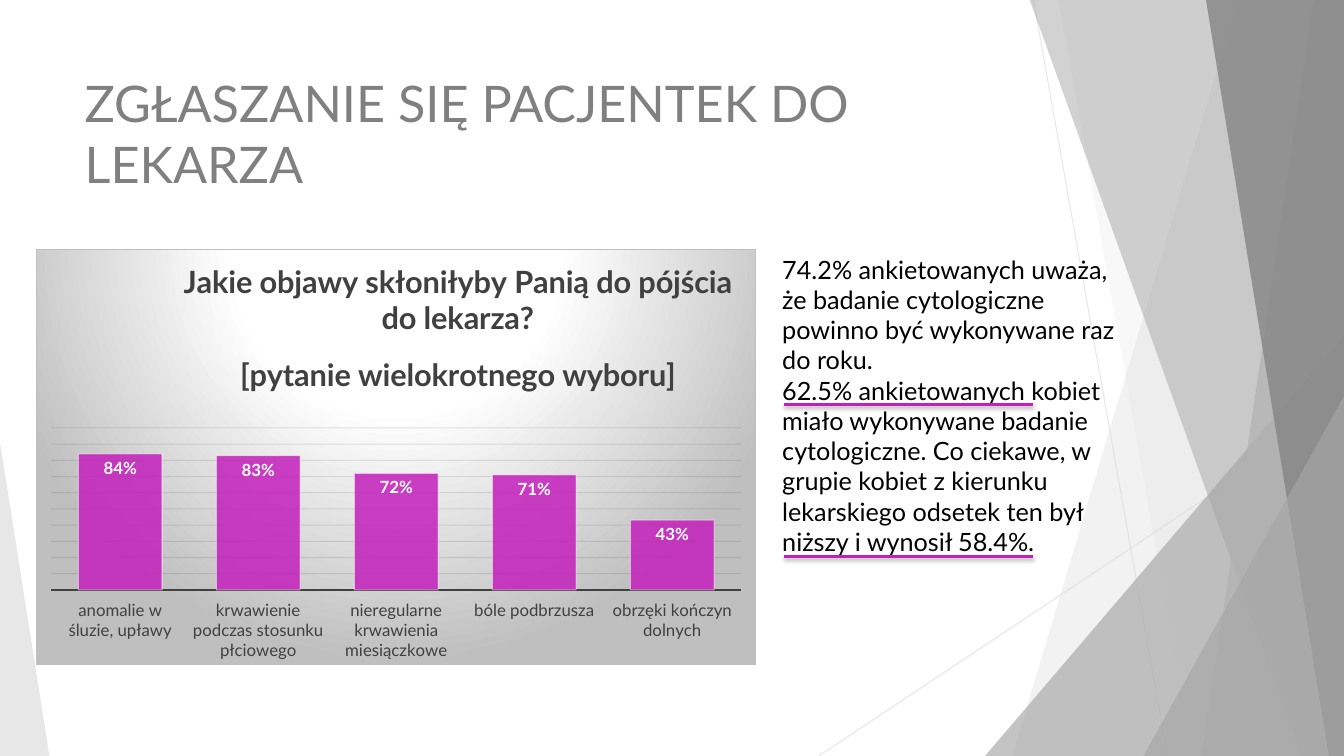
from lxml.etree import SubElement
from pptx import Presentation
from pptx.chart.data import CategoryChartData
from pptx.dml.color import RGBColor
from pptx.enum.chart import XL_CHART_TYPE, XL_LABEL_POSITION, XL_TICK_LABEL_POSITION, XL_TICK_MARK
from pptx.enum.shapes import MSO_CONNECTOR, MSO_SHAPE
from pptx.enum.text import MSO_ANCHOR, PP_ALIGN
from pptx.oxml import parse_xml
from pptx.oxml.ns import nsdecls, qn
from pptx.util import Inches, Pt

FONT = "Lato"
MAGENTA = "C31FBB"
BOTTOM = 7.5
RIGHT = 13.33

FACETS = [
    ([(12.28, -0.01), (RIGHT, -0.01), (RIGHT, BOTTOM), (10.04, BOTTOM)], "DDDDDD", 36),
    ([(10.5, -0.01), (RIGHT, -0.01), (RIGHT, BOTTOM), (11.83, BOTTOM)], "DDDDDD", 20),
    ([(9.77, 3.33, 3.56, 4.17), 1], "A6A6A6", 66),
    ([(10.21, -0.01), (RIGHT, -0.01), (RIGHT, BOTTOM), (12.91, BOTTOM)], "A6A6A6", 50),
    ([(13.03, -0.01), (RIGHT, -0.01), (RIGHT, BOTTOM), (11.92, BOTTOM)], "B2B2B2", 70),
    ([(11.96, -0.01), (RIGHT, -0.01), (RIGHT, BOTTOM), (13.18, BOTTOM)], "858585", 80),
    ([(11.34, 3.93, 1.99, 3.57), 1], "A6A6A6", 66),
    ([(0, 4.39, 0.49, 3.11), 0], "DDDDDD", 70),
]

SYMPTOMS = {
    "anomalie w śluzie, upławy": 0.84,
    "krwawienie podczas stosunku płciowego": 0.83,
    "nieregularne krwawienia miesiączkowe": 0.72,
    "bóle podbrzusza": 0.71,
    "obrzęki kończyn dolnych": 0.43,
}

FINDINGS = [
    "74.2% ankietowanych uważa, że badanie cytologiczne powinno być wykonywane raz do roku.",
    "62.5% ankietowanych kobiet miało wykonywane badanie cytologiczne. Co ciekawe, w grupie "
    "kobiet z kierunku lekarskiego odsetek ten był niższy i wynosił 58.4%.",
]


def color(value):
    return RGBColor.from_string(value)


def set_alpha(element, *percents):
    for clr, percent in zip(element.iter(qn("a:srgbClr")), percents):
        SubElement(clr, qn("a:alpha")).set("val", str(percent * 1000))


def set_font(font, size, value, bold=False):
    font.name = FONT
    font.size = Pt(size)
    font.bold = bold
    font.color.rgb = color(value)


def set_line(line, value, width):
    line.color.rgb = color(value)
    line.width = Pt(width)


def add_facet(s, geometry, value, alpha):
    if len(geometry) == 2:
        box, apex = geometry
        sp = s.shapes.add_shape(MSO_SHAPE.ISOSCELES_TRIANGLE, *map(Inches, box))
        sp.adjustments[0] = apex
    else:
        points = [(Inches(x), Inches(y)) for x, y in geometry]
        builder = s.shapes.build_freeform(*points[0], scale=1.0)
        builder.add_line_segments(points[1:], close=True)
        sp = builder.convert_to_shape()
    sp.shadow.inherit = False
    sp.fill.solid()
    sp.fill.fore_color.rgb = color(value)
    sp.line.fill.background()
    set_alpha(sp._element, alpha)


def add_line(s, start, end, value, width, alpha=100):
    line = s.shapes.add_connector(MSO_CONNECTOR.STRAIGHT, *map(Inches, start + end))
    set_line(line.line, value, width)
    if alpha < 100:
        set_alpha(line._element, alpha)
    return SubElement(line._element.spPr, qn("a:effectLst"))


def add_underline(s, y):
    effects = add_line(s, (7.78, y), (10.25, y), MAGENTA, 2)
    effects.append(parse_xml(
        f'<a:outerShdw {nsdecls("a")} blurRad="{Pt(3)}" dist="{Pt(2)}" dir="5400000" '
        'rotWithShape="0"><a:srgbClr val="000000"><a:alpha val="35000"/></a:srgbClr></a:outerShdw>'))


def set_title(s, text):
    title = s.shapes.title
    title.left, title.top, title.width, title.height = map(Inches, (0.74, 0.67, 9.4, 1.44))
    tf = title.text_frame
    tf.text = text
    tf.word_wrap = True
    tf.vertical_anchor = MSO_ANCHOR.TOP
    p = tf.paragraphs[0]
    p.alignment = PP_ALIGN.LEFT
    set_font(p.runs[0].font, 36, "808080")


def add_text(s, box, paragraphs):
    tf = s.shapes.add_textbox(*map(Inches, box)).text_frame
    tf.word_wrap = True
    tf.text = "\n".join(paragraphs)
    for p in tf.paragraphs:
        set_font(p.runs[0].font, 18, "000000")


def layout_xml(x, y, size="", target=""):
    return parse_xml(
        f'<c:layout {nsdecls("c")}><c:manualLayout>{target}<c:xMode val="edge"/>'
        f'<c:yMode val="edge"/><c:x val="{x}"/><c:y val="{y}"/>{size}</c:manualLayout></c:layout>')


def place_chart_parts(chart):
    title = chart.chart_title._element
    plot_area = chart._chartSpace.chart.plotArea
    for parent in (title, plot_area):
        for old in parent.findall(qn("c:layout")):
            parent.remove(old)
    title.find(qn("c:tx")).addnext(layout_xml(0.2, 0.02))
    plot_area.insert(0, layout_xml(0.02, 0.43, '<c:w val="0.96"/><c:h val="0.39"/>',
                                   '<c:layoutTarget val="inner"/>'))


def fill_chart_area(chart):
    stops = "".join(f'<a:gs pos="{pos * 1000}"><a:srgbClr val="{value}"/></a:gs>'
                    for pos, value in ((0, "FFFFFF"), (39, "FFFFFF"), (100, "BFBFBF")))
    chart._chartSpace.chart.addnext(parse_xml(
        f'<c:spPr {nsdecls("c", "a")}><a:gradFill><a:gsLst>{stops}</a:gsLst><a:path path="circle">'
        '<a:fillToRect l="50000" t="-80000" r="50000" b="180000"/></a:path></a:gradFill>'
        f'<a:ln w="{Pt(0.75)}"><a:solidFill><a:srgbClr val="BFBFBF"/></a:solidFill></a:ln></c:spPr>'))


def format_axes(chart):
    cat = chart.category_axis
    cat.major_tick_mark = XL_TICK_MARK.NONE
    cat.tick_label_position = XL_TICK_LABEL_POSITION.LOW
    set_font(cat.tick_labels.font, 12, "404040")
    set_line(cat.format.line, "404040", 1.5)
    val = chart.value_axis
    val.minimum_scale, val.maximum_scale, val.major_unit = 0, 1, 0.1
    val.visible = False
    set_line(val.major_gridlines.format.line, "0D0D0D", 0.75)
    set_alpha(val._element, 10)


def format_columns(plot):
    plot.gap_width = 65
    plot.vary_by_categories = False
    series = plot.series[0]
    series.format.fill.solid()
    series.format.fill.fore_color.rgb = color(MAGENTA)
    set_line(series.format.line, "FFFFFF", 0.75)
    set_alpha(series._element, 85, 50)
    labels = series.data_labels
    labels.show_value = True
    labels.position = XL_LABEL_POSITION.INSIDE_END
    labels.number_format = "0%"
    labels.number_format_is_linked = False
    set_font(labels.font, 12, "FFFFFF", True)


def add_symptom_chart(s, box):
    data = CategoryChartData(number_format="0%")
    data.categories = list(SYMPTOMS)
    data.add_series("Series 1", list(SYMPTOMS.values()))
    chart = s.shapes.add_chart(XL_CHART_TYPE.COLUMN_CLUSTERED, *map(Inches, box), data).chart
    set_font(chart.font, 10, "000000")
    chart.has_legend = False
    tf = chart.chart_title.text_frame
    tf.text = "Jakie objawy skłoniłyby Panią do pójścia do lekarza?\v\v[pytanie wielokrotnego wyboru]"
    for r in tf.paragraphs[0].runs:
        set_font(r.font, 22, "404040", True)
    chart.chart_title.include_in_layout = False
    format_axes(chart)
    format_columns(chart.plots[0])
    place_chart_parts(chart)
    fill_chart_area(chart)


def main():
    prs = Presentation()
    prs.slide_width, prs.slide_height = Inches(RIGHT), Inches(BOTTOM)
    s = prs.slides.add_slide(prs.slide_layouts[5])
    add_line(s, (10.25, 0), (11.58, BOTTOM), "DDDDDD", 0.75, 70)
    add_line(s, (RIGHT, 4.03), (8.12, BOTTOM), "DDDDDD", 0.75, 70)
    for facet in FACETS:
        add_facet(s, *facet)
    set_title(s, "ZGŁASZANIE SIĘ PACJENTEK DO LEKARZA")
    add_symptom_chart(s, (0.36, 2.47, 7.14, 4.13))
    add_text(s, (7.66, 2.47, 3.68, 3.43), FINDINGS)
    for y in (5.52, 4.01):
        add_underline(s, y)
    prs.save("out.pptx")


if __name__ == "__main__":
    main()
